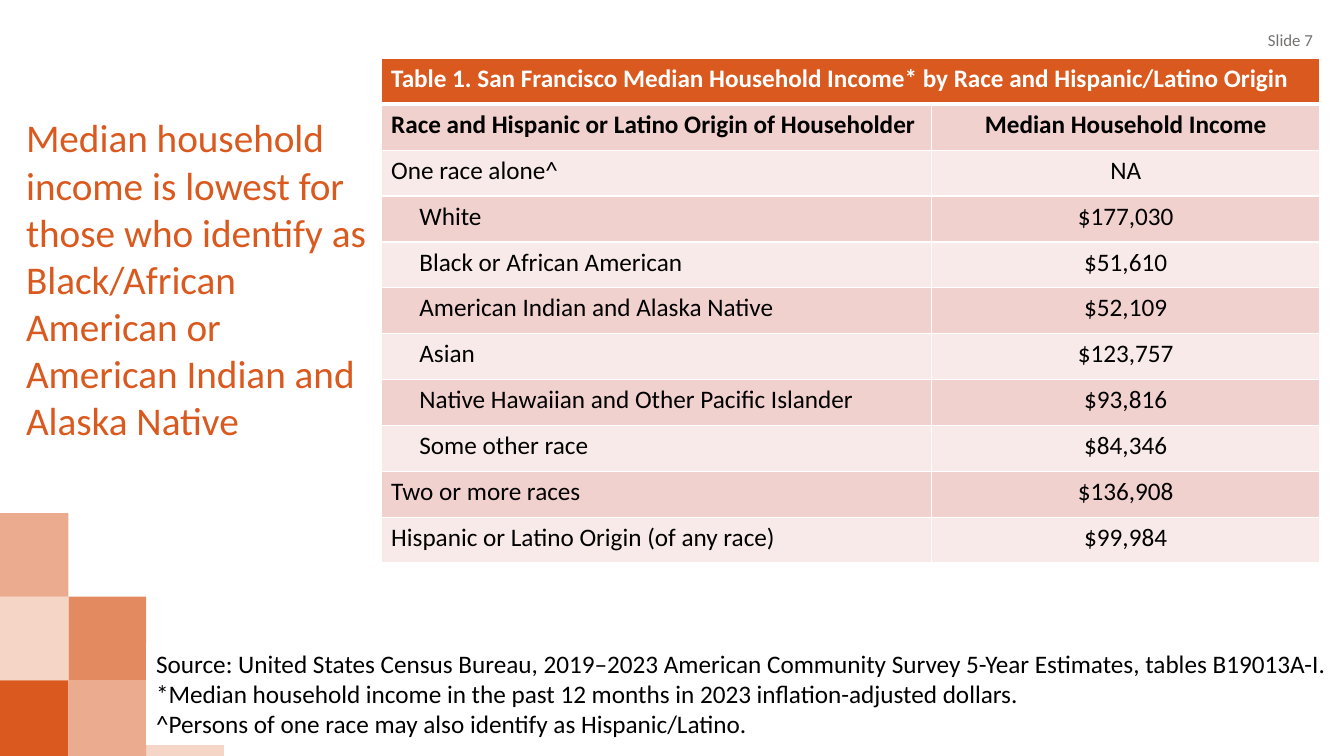
from lxml.etree import SubElement
from pptx import Presentation
from pptx.dml.color import RGBColor
from pptx.enum.shapes import MSO_SHAPE
from pptx.enum.text import MSO_ANCHOR, PP_ALIGN
from pptx.oxml.ns import qn
from pptx.util import Inches, Pt

ORANGE = RGBColor(0xD9, 0x59, 0x1E)
DARK_BAND = RGBColor(0xF1, 0xD1, 0xCD)
LIGHT_BAND = RGBColor(0xF8, 0xEA, 0xE8)
GRAY = RGBColor(0x76, 0x71, 0x71)
BLACK = RGBColor(0x00, 0x00, 0x00)
WHITE = RGBColor(0xFF, 0xFF, 0xFF)

TILE_WIDTH, TILE_HEIGHT = 0.77, 0.83
TILES = [(0, 0, 100), (1, 0, 50), (0, 1, 25), (1, 1, 70), (2, 0, 25), (0, 2, 50)]

TITLE = ("Median household income is lowest for those who identify as "
         "Black/African American or American Indian and Alaska Native")
TABLE_TITLE = "Table 1. San Francisco Median Household Income* by Race and Hispanic/Latino Origin"
HEADINGS = ("Race and Hispanic or Latino Origin of Householder", "Median Household Income")
INCOMES = [
    ("One race alone^", "NA", False),
    ("White", "$177,030", True),
    ("Black or African American", "$51,610", True),
    ("American Indian and Alaska Native", "$52,109", True),
    ("Asian", "$123,757", True),
    ("Native Hawaiian and Other Pacific Islander", "$93,816", True),
    ("Some other race", "$84,346", True),
    ("Two or more races", "$136,908", False),
    ("Hispanic or Latino Origin (of any race)", "$99,984", False),
]
NOTES = [
    "Source: United States Census Bureau, 2019–2023 American Community Survey "
    "5-Year Estimates, tables B19013A-I.",
    "*Median household income in the past 12 months in 2023 inflation-adjusted dollars.",
    "^Persons of one race may also identify as Hispanic/Latino.",
]


def style_paragraph(paragraph, size, color, bold=False, align=PP_ALIGN.LEFT):
    paragraph.alignment = align
    paragraph.font.name = "Calibri"
    paragraph.font.size = Pt(size)
    paragraph.font.bold = bold
    paragraph.font.color.rgb = color


def fill_text(shape, lines, size, color, align=PP_ALIGN.LEFT, anchor=MSO_ANCHOR.TOP):
    frame = shape.text_frame
    frame.word_wrap = True
    frame.vertical_anchor = anchor
    frame.text = "\n".join(lines)
    for paragraph in frame.paragraphs:
        style_paragraph(paragraph, size, color, align=align)


def add_rectangle(slide, left, top, width, height, color, opacity=100):
    shape = slide.shapes.add_shape(MSO_SHAPE.RECTANGLE, Inches(left), Inches(top),
                                   Inches(width), Inches(height))
    shape.shadow.inherit = False
    shape.line.fill.background()
    shape.fill.solid()
    shape.fill.fore_color.rgb = color
    if opacity < 100:
        color_element = shape.fill._xPr.find(qn("a:solidFill"))[0]
        SubElement(color_element, qn("a:alpha"), val=str(opacity * 1000))
    return shape


def add_text(slide, left, top, width, height, text, size, color, **layout):
    box = slide.shapes.add_textbox(Inches(left), Inches(top), Inches(width), Inches(height))
    fill_text(box, [text], size, color, **layout)


def set_borders(cell, bottom_width):
    properties = cell._tc.get_or_add_tcPr()
    for side, width in (("L", 1), ("R", 1), ("T", 1), ("B", bottom_width)):
        line = SubElement(properties, qn(f"a:ln{side}"), w=str(Pt(width)))
        SubElement(SubElement(line, qn("a:solidFill")), qn("a:srgbClr"), val=str(WHITE))


def fill_cell(cell, text, fill, color=BLACK, bold=False, align=PP_ALIGN.LEFT,
              indent=0, bottom_width=1):
    set_borders(cell, bottom_width)
    cell.fill.solid()
    cell.fill.fore_color.rgb = fill
    cell.margin_left = Inches(0.1 + indent)
    cell.text = text
    style_paragraph(cell.text_frame.paragraphs[0], 18, color, bold, align)


def add_income_table(slide):
    rows = [(*HEADINGS, False)] + INCOMES
    table = slide.shapes.add_table(len(rows) + 1, 2, Inches(3.78), Inches(0.58),
                                   Inches(9.31), Inches(5.01)).table
    table.columns[0].width = Inches(5.46)
    table.columns[1].width = Inches(3.85)
    table.cell(0, 0).merge(table.cell(0, 1))
    fill_cell(table.cell(0, 0), TABLE_TITLE, ORANGE, WHITE, bold=True, bottom_width=3)
    for index, (group, income, indented) in enumerate(rows, start=1):
        band = DARK_BAND if index % 2 else LIGHT_BAND
        bold = index == 1
        fill_cell(table.cell(index, 0), group, band, bold=bold, indent=0.28 if indented else 0)
        fill_cell(table.cell(index, 1), income, band, bold=bold, align=PP_ALIGN.CENTER)


def main():
    presentation = Presentation()
    presentation.slide_width = Inches(13.33)
    presentation.slide_height = Inches(7.5)
    slide = presentation.slides.add_slide(presentation.slide_layouts[6])
    for column, level, opacity in TILES:
        add_rectangle(slide, -0.09 + column * TILE_WIDTH, 6.75 - level * TILE_HEIGHT,
                      TILE_WIDTH, TILE_HEIGHT, ORANGE, opacity)
    add_text(slide, 10.12, 0.2, 3, 0.4, "Slide 7", 12, GRAY,
             align=PP_ALIGN.RIGHT, anchor=MSO_ANCHOR.MIDDLE)
    add_text(slide, 0.16, 1.08, 3.61, 3.4, TITLE, 28, ORANGE)
    add_income_table(slide)
    notes = add_rectangle(slide, 1.45, 6.38, 11.88, 1.01, WHITE)
    fill_text(notes, NOTES, 18, BLACK)
    presentation.save("out.pptx")


if __name__ == "__main__":
    main()
